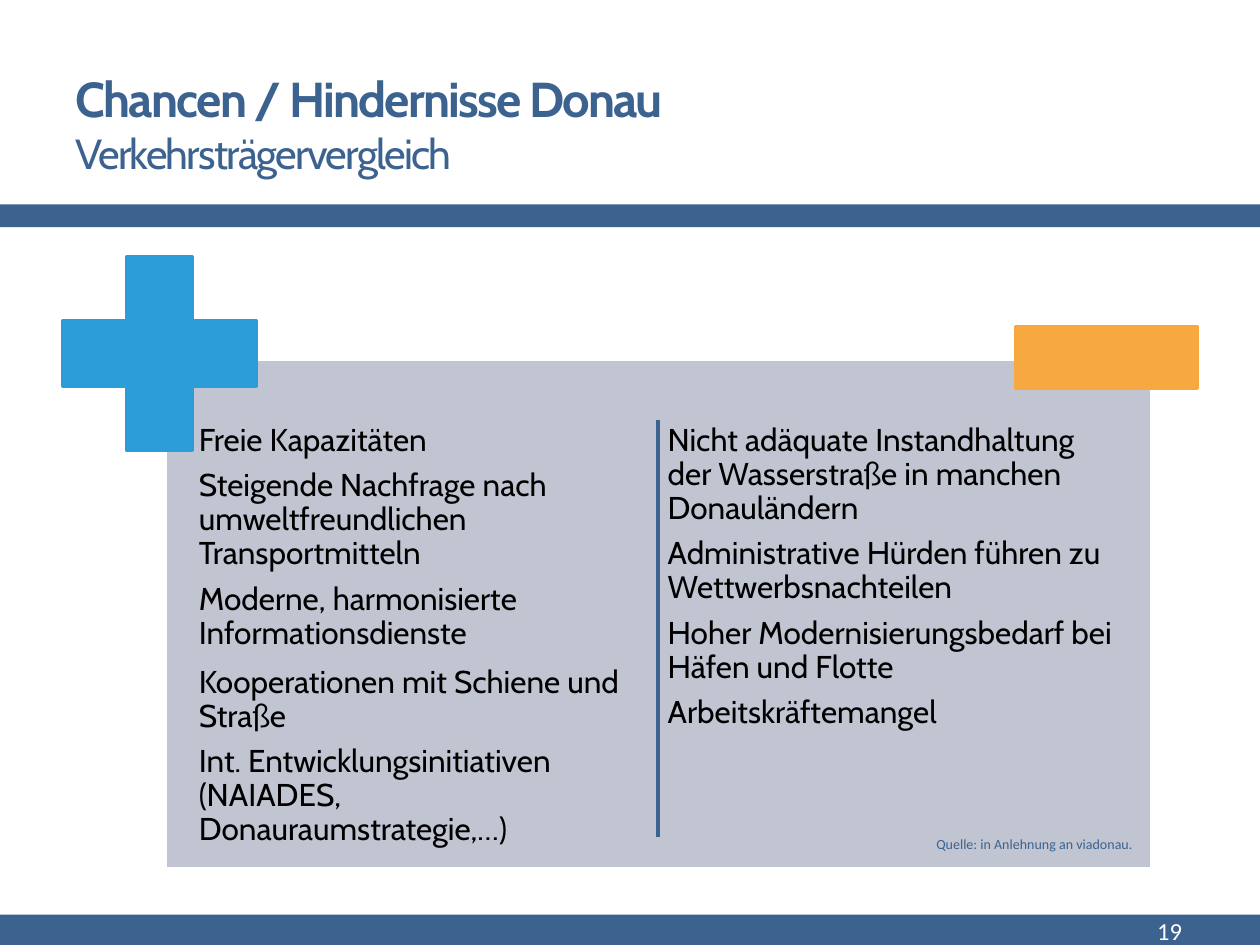
from dataclasses import dataclass

from lxml import etree
from pptx import Presentation
from pptx.dml.color import RGBColor
from pptx.enum.shapes import MSO_CONNECTOR, MSO_SHAPE
from pptx.enum.text import MSO_ANCHOR, MSO_AUTO_SIZE, PP_ALIGN
from pptx.oxml.ns import qn
from pptx.util import Cm, Pt

RECTANGLE, PLUS = MSO_SHAPE.RECTANGLE, MSO_SHAPE.CROSS
STRAIGHT = MSO_CONNECTOR.STRAIGHT
TOP, MIDDLE = MSO_ANCHOR.TOP, MSO_ANCHOR.MIDDLE
LEFT, RIGHT = PP_ALIGN.LEFT, PP_ALIGN.RIGHT
NO_AUTOFIT = MSO_AUTO_SIZE.NONE

# Content
TITLE = "Chancen / Hindernisse Donau"
SUBTITLE = "Verkehrsträgervergleich"
CHANCES = [
    "Freie Kapazitäten",
    "Steigende Nachfrage nach umweltfreundlichen Transportmitteln",
    "Moderne, harmonisierte Informationsdienste",
    "Kooperationen mit Schiene und Straße",
    "Int. Entwicklungsinitiativen (NAIADES, Donauraumstrategie,…)",
]
OBSTACLES = [
    "Nicht adäquate Instandhaltung der Wasserstraße in manchen Donauländern",
    "Administrative Hürden führen zu Wettwerbsnachteilen",
    "Hoher Modernisierungsbedarf bei Häfen und Flotte",
    "Arbeitskräftemangel",
]
WIDE_GAP_AFTER = CHANCES[2]
SOURCE = "Quelle: in Anlehnung an viadonau."
PAGE_NUMBER = "19"


@dataclass(frozen=True)
class Theme:
    blue: RGBColor = RGBColor(0x3C, 0x62, 0x8F)
    panel: RGBColor = RGBColor(0xC0, 0xC5, 0xD1)
    plus: RGBColor = RGBColor(0x2D, 0x9D, 0xD9)
    minus: RGBColor = RGBColor(0xF7, 0xA9, 0x41)
    white: RGBColor = RGBColor(0xFF, 0xFF, 0xFF)
    black: RGBColor = RGBColor(0, 0, 0)
    heading_font: str = "Cabin"
    small_font: str = "Calibri"
    title_size: Pt = Pt(28)
    subtitle_size: Pt = Pt(24)
    list_size: Pt = Pt(18)
    number_size: Pt = Pt(14)
    source_size: Pt = Pt(8)
    line_width: Pt = Pt(2.08)


THEME = Theme()


def place(shape, left, top, width, height):
    shape.left, shape.top = Cm(left), Cm(top)
    shape.width, shape.height = Cm(width), Cm(height)


def format_font(font, name, size, color, bold=False):
    font.name, font.size, font.bold = name, size, bold
    font.color.rgb = color


def add_block(slide, kind, box, fill, line=None):
    shape = slide.shapes.add_shape(kind, *map(Cm, box))
    shape.shadow.inherit = False
    shape.fill.solid()
    shape.fill.fore_color.rgb = fill
    if line is None:
        shape.line.fill.background()
    else:
        shape.line.color.rgb = line
        shape.line.width = THEME.line_width
    return shape


def fill_title(title):
    place(title, 1.27, 1.12, 13.23, 2.74)
    frame = title.text_frame
    frame.text = f"{TITLE}\v{SUBTITLE}"
    frame.auto_size = NO_AUTOFIT
    frame.vertical_anchor = MIDDLE
    paragraph = frame.paragraphs[0]
    paragraph.alignment = LEFT
    sizes = (THEME.title_size, THEME.subtitle_size)
    for run, size, bold in zip(paragraph.runs, sizes, (True, False)):
        format_font(run.font, THEME.heading_font, size, THEME.blue, bold)
        run.font._element.set("spc", "-100")


def fill_list(body, items, left):
    place(body, left, 8.46, 9.25, 8.79)
    frame = body.text_frame
    frame.text = "\n".join(items)
    frame.auto_size = NO_AUTOFIT
    frame.vertical_anchor = TOP
    frame.margin_left = frame.margin_right = Cm(0.1)
    frame.margin_top = frame.margin_bottom = Cm(0.1)
    for paragraph in frame.paragraphs:
        properties = paragraph._p.get_or_add_pPr()
        properties.set("marL", "0")
        properties.set("indent", "0")
        etree.SubElement(properties, qn("a:buNone"))
        paragraph.line_spacing = 0.9
        paragraph.space_before = Pt(0)
        paragraph.space_after = Pt(8.6 if paragraph.text == WIDE_GAP_AFTER else 6.3)
        for run in paragraph.runs:
            format_font(run.font, THEME.heading_font, THEME.list_size, THEME.black)


def add_small_text(slide, text, box, size, color, anchor):
    frame = slide.shapes.add_textbox(*map(Cm, box)).text_frame
    frame.word_wrap = True
    frame.vertical_anchor = anchor
    frame.text = text
    paragraph = frame.paragraphs[0]
    paragraph.alignment = RIGHT
    format_font(paragraph.runs[0].font, THEME.small_font, size, color)


def main():
    presentation = Presentation()
    presentation.slide_width, presentation.slide_height = Cm(25.4), Cm(19.05)
    slide = presentation.slides.add_slide(presentation.slide_layouts[3])

    # Header and footer bars
    add_block(slide, RECTANGLE, (0, 4.12, 25.4, 0.46), THEME.blue)
    add_block(slide, RECTANGLE, (0, 18.44, 25.4, 0.61), THEME.blue)

    # Title and the two lists, with the panel behind them
    panel = add_block(slide, RECTANGLE, (3.33, 7.24, 19.89, 10.28),
                      THEME.panel, THEME.white)
    slide.shapes._spTree.insert(2, panel._element)
    title, chances, obstacles = slide.placeholders
    fill_title(title)
    fill_list(chances, CHANCES, 3.91)
    fill_list(obstacles, OBSTACLES, 13.36)

    # Plus and minus signs
    plus = add_block(slide, PLUS, (1.27, 5.18, 3.89, 3.89), THEME.plus, THEME.plus)
    plus.adjustments[0] = 0.33
    add_block(slide, RECTANGLE, (20.47, 6.58, 3.66, 1.24), THEME.minus, THEME.minus)

    # Divider between the lists
    divider = slide.shapes.add_connector(
        STRAIGHT, Cm(13.27), Cm(8.46), Cm(13.27), Cm(16.87))
    divider.line.color.rgb = THEME.blue
    divider.line.width = THEME.line_width
    etree.SubElement(divider._element.spPr, qn("a:effectLst"))

    # Page number and source
    add_small_text(slide, PAGE_NUMBER, (21.11, 18.31, 2.97, 0.91),
                   THEME.number_size, THEME.white, MIDDLE)
    add_small_text(slide, SOURCE, (16.89, 16.71, 6.2, 0.61),
                   THEME.source_size, THEME.blue, TOP)

    presentation.save("out.pptx")


if __name__ == "__main__":
    main()
